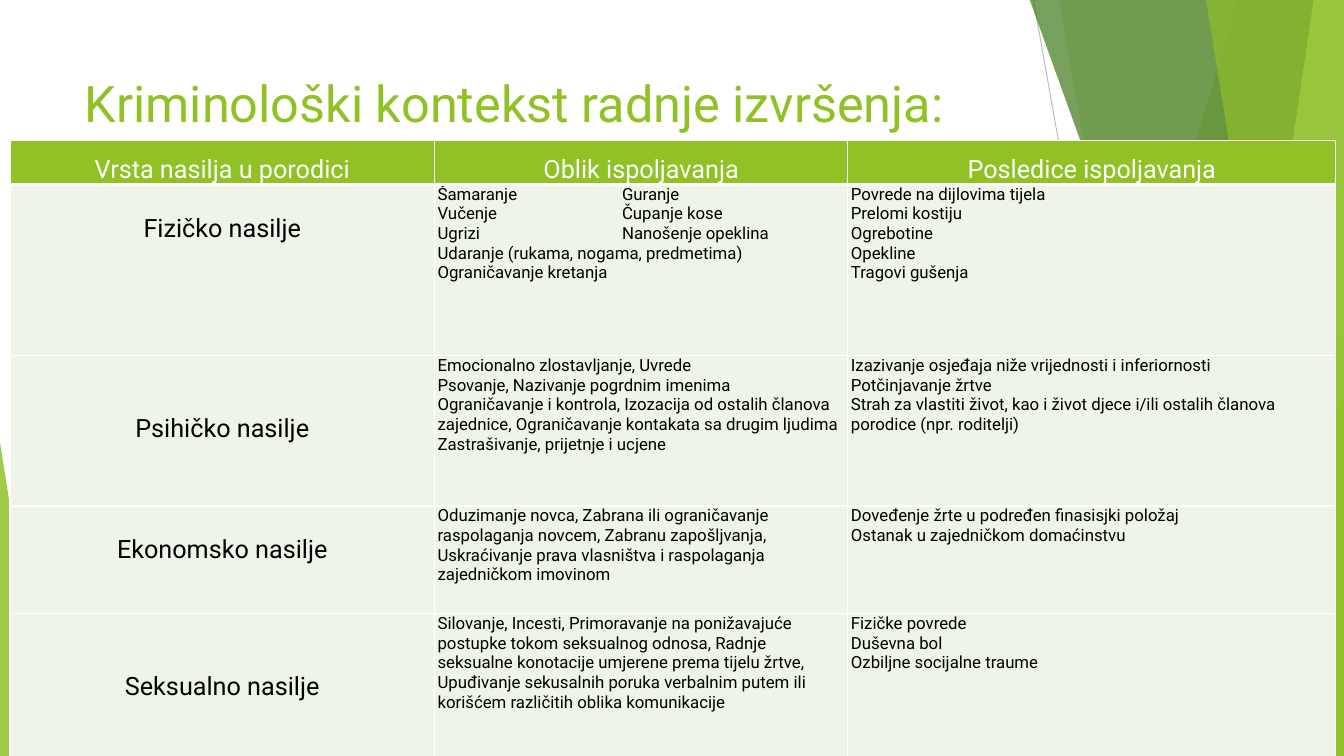
from lxml import etree
from pptx import Presentation
from pptx.dml.color import RGBColor
from pptx.enum.shapes import MSO_CONNECTOR, MSO_SHAPE
from pptx.enum.text import MSO_ANCHOR, MSO_AUTO_SIZE, PP_ALIGN
from pptx.oxml.ns import qn
from pptx.util import Inches, Pt

STRAIGHT = MSO_CONNECTOR.STRAIGHT
TRIANGLE = MSO_SHAPE.ISOSCELES_TRIANGLE
TOP = MSO_ANCHOR.TOP
NO_AUTOFIT = MSO_AUTO_SIZE.NONE
LEFT, CENTER = PP_ALIGN.LEFT, PP_ALIGN.CENTER

WHITE = RGBColor(0xFF, 0xFF, 0xFF)
BLACK = RGBColor(0, 0, 0)
GREEN = RGBColor(0x90, 0xC2, 0x26)
LEAF = RGBColor(0x54, 0xA0, 0x21)
FOREST = RGBColor(0x3F, 0x78, 0x19)
LIME = RGBColor(0xC0, 0xE4, 0x74)
PALE = RGBColor(0xEE, 0xF4, 0xE8)
GRAY = RGBColor(0xBF, 0xBF, 0xBF)
LIGHT_GRAY = RGBColor(0xD9, 0xD9, 0xD9)

FONT = "Roboto"
WIDTH, HEIGHT = 13.33, 7.5
BLEED = -0.01
CATEGORY_LINE = 0.29
TAB_STOP = 1.83

COLUMN_WIDTHS = [4.21, 4.1, 4.84]
ROW_HEIGHTS = [0.36, 1.7, 1.49, 1.07, 1.49]
HEADINGS = ["Vrsta nasilja u porodici", "Oblik ispoljavanja", "Posledice ispoljavanja"]
VIOLENCE_TYPES = [
    ("Fizičko nasilje", 1,
     ["Šamaranje\tGuranje", "Vučenje\tČupanje kose", "Ugrizi\tNanošenje opeklina",
      "Udaranje (rukama, nogama, predmetima)", "Ograničavanje kretanja"],
     ["Povrede na dijlovima tijela", "Prelomi kostiju", "Ogrebotine", "Opekline",
      "Tragovi gušenja"]),
    ("Psihičko nasilje", 2,
     ["Emocionalno zlostavljanje, Uvrede", "Psovanje, Nazivanje pogrdnim imenima",
      "Ograničavanje i kontrola, Izozacija od ostalih članova zajednice, "
      "Ograničavanje kontakata sa drugim ljudima",
      "Zastrašivanje, prijetnje i ucjene"],
     ["Izazivanje osjeđaja niže vrijednosti i inferiornosti", "Potčinjavanje žrtve",
      "Strah za vlastiti život, kao i život djece i/ili ostalih članova porodice "
      "(npr. roditelji)"]),
    ("Ekonomsko nasilje", 1,
     ["Oduzimanje novca, Zabrana ili ograničavanje raspolaganja novcem, Zabranu "
      "zapošljvanja, Uskraćivanje prava vlasništva i raspolaganja zajedničkom imovinom"],
     ["Doveđenje žrte u podređen finasisjki položaj",
      "Ostanak u zajedničkom domaćinstvu"]),
    ("Seksualno nasilje", 2,
     ["Silovanje, Incesti, Primoravanje na ponižavajuće postupke tokom seksualnog "
      "odnosa, Radnje seksualne konotacije umjerene prema tijelu žrtve, Upuđivanje "
      "sekusalnih poruka verbalnim putem ili korišćem različitih oblika komunikacije"],
     ["Fizičke povrede", "Duševna bol", "Ozbiljne socijalne traume"]),
]


def paint(facet, color, opacity):
    facet.shadow.inherit = False
    facet.fill.solid()
    facet.fill.fore_color.rgb = color
    facet.line.fill.background()
    rgb = facet.fill._xPr.find(".//" + qn("a:srgbClr"))
    etree.SubElement(rgb, qn("a:alpha"), val=str(opacity * 1000))


def add_ray(slide, x1, y1, x2, y2, color):
    ray = slide.shapes.add_connector(STRAIGHT, Inches(x1), Inches(y1), Inches(x2), Inches(y2))
    ray.line.color.rgb = color
    ray.line.width = Pt(0.75)
    etree.SubElement(ray.element.spPr, qn("a:effectLst"))


def add_band(slide, top_x, bottom_x, right, bottom, color, opacity):
    outline = slide.shapes.build_freeform(Inches(top_x), Inches(BLEED))
    corners = [(right, BLEED), (right, bottom), (bottom_x, bottom)]
    outline.add_line_segments([(Inches(x), Inches(y)) for x, y in corners], close=True)
    paint(outline.convert_to_shape(), color, opacity)


def add_corner(slide, left, top, right, bottom, apex, color, opacity):
    corner = slide.shapes.add_shape(
        TRIANGLE, Inches(left), Inches(top), Inches(right - left), Inches(bottom - top))
    corner.adjustments[0] = apex
    paint(corner, color, opacity)


def add_facets(slide, right, bottom):
    add_ray(slide, 10.25, 0, 11.58, bottom, GRAY)
    add_ray(slide, right, 4.03, 8.12, bottom, LIGHT_GRAY)
    add_band(slide, 12.28, 10.04, right, bottom, GREEN, 30)
    add_band(slide, 10.5, 11.83, right, bottom, GREEN, 20)
    add_corner(slide, 9.77, 3.33, right, bottom, 1, LEAF, 72)
    add_band(slide, 10.21, 12.91, right, bottom, FOREST, 70)
    add_band(slide, 13.03, 11.92, right, bottom, LIME, 70)
    add_band(slide, 11.96, 13.18, right, bottom, GREEN, 65)
    add_corner(slide, 11.34, 3.93, right, bottom, 1, GREEN, 80)
    add_corner(slide, 0, 4.39, 0.49, bottom, 0, GREEN, 85)


def format_paragraph(paragraph, size, color, alignment):
    paragraph.alignment = alignment
    paragraph.font.name = FONT
    paragraph.font.size = Pt(size)
    paragraph.font.color.rgb = color


def place_title(slide, left, top, width, height):
    title = slide.shapes.title
    title.left, title.top = Inches(left), Inches(top)
    title.width, title.height = Inches(width), Inches(height)
    frame = title.text_frame
    frame.text = "Kriminološki kontekst radnje izvršenja:"
    frame.vertical_anchor = TOP
    frame.word_wrap = True
    frame.auto_size = NO_AUTOFIT
    format_paragraph(frame.paragraphs[0], 36, GREEN, LEFT)
    title.element.getparent().append(title.element)


def add_borders(cell, widths):
    properties = cell._tc.get_or_add_tcPr()
    for position, (side, width) in enumerate(widths.items()):
        border = etree.Element(qn("a:" + side), w=str(Pt(width)))
        fill = etree.SubElement(border, qn("a:solidFill"))
        etree.SubElement(fill, qn("a:srgbClr"), val=str(WHITE))
        properties.insert(position, border)


def fill_cell(cell, lines, size, color, background, alignment, top=0):
    cell.fill.solid()
    cell.fill.fore_color.rgb = background
    cell.margin_left = cell.margin_right = Inches(0.03)
    cell.margin_top, cell.margin_bottom = Inches(top), 0
    cell.text_frame.text = "\n".join(lines)
    for paragraph in cell.text_frame.paragraphs:
        format_paragraph(paragraph, size, color, alignment)
        if "\t" in paragraph.text:
            tabs = etree.SubElement(paragraph._p.get_or_add_pPr(), qn("a:tabLst"))
            etree.SubElement(tabs, qn("a:tab"), pos=str(Inches(TAB_STOP)), algn="l")
            paragraph._p.pPr.insert(0, tabs)


def add_violence_table(slide, left, top):
    table = slide.shapes.add_table(
        len(ROW_HEIGHTS), len(COLUMN_WIDTHS), Inches(left), Inches(top),
        Inches(sum(COLUMN_WIDTHS)), Inches(sum(ROW_HEIGHTS))).table
    table.horz_banding = False
    for column, width in zip(table.columns, COLUMN_WIDTHS):
        column.width = Inches(width)
    for row, height in zip(table.rows, ROW_HEIGHTS):
        row.height = Inches(height)

    for cell, heading in zip(table.rows[0].cells, HEADINGS):
        fill_cell(cell, [heading], 18, WHITE, GREEN, CENTER)
        cell.text_frame.paragraphs[0].line_spacing = 1.5
        add_borders(cell, {"lnL": 1, "lnR": 1, "lnT": 1, "lnB": 3})

    for row, (category, drop, forms, consequences) in enumerate(VIOLENCE_TYPES, 1):
        fill_cell(table.cell(row, 0), [category], 18, BLACK, PALE, CENTER, drop * CATEGORY_LINE)
        fill_cell(table.cell(row, 1), forms, 12, BLACK, PALE, LEFT)
        fill_cell(table.cell(row, 2), consequences, 12, BLACK, PALE, LEFT)
        for cell in table.rows[row].cells:
            add_borders(cell, {"lnL": 1, "lnR": 1, "lnB": 1})


def main():
    presentation = Presentation()
    presentation.slide_width = Inches(WIDTH)
    presentation.slide_height = Inches(HEIGHT)
    slide = presentation.slides.add_slide(presentation.slide_layouts[5])
    add_facets(slide, WIDTH, HEIGHT)
    place_title(slide, 0.74, 0.67, 9.4, 1.44)
    add_violence_table(slide, 0.1, 1.39)
    presentation.save("out.pptx")


if __name__ == "__main__":
    main()
